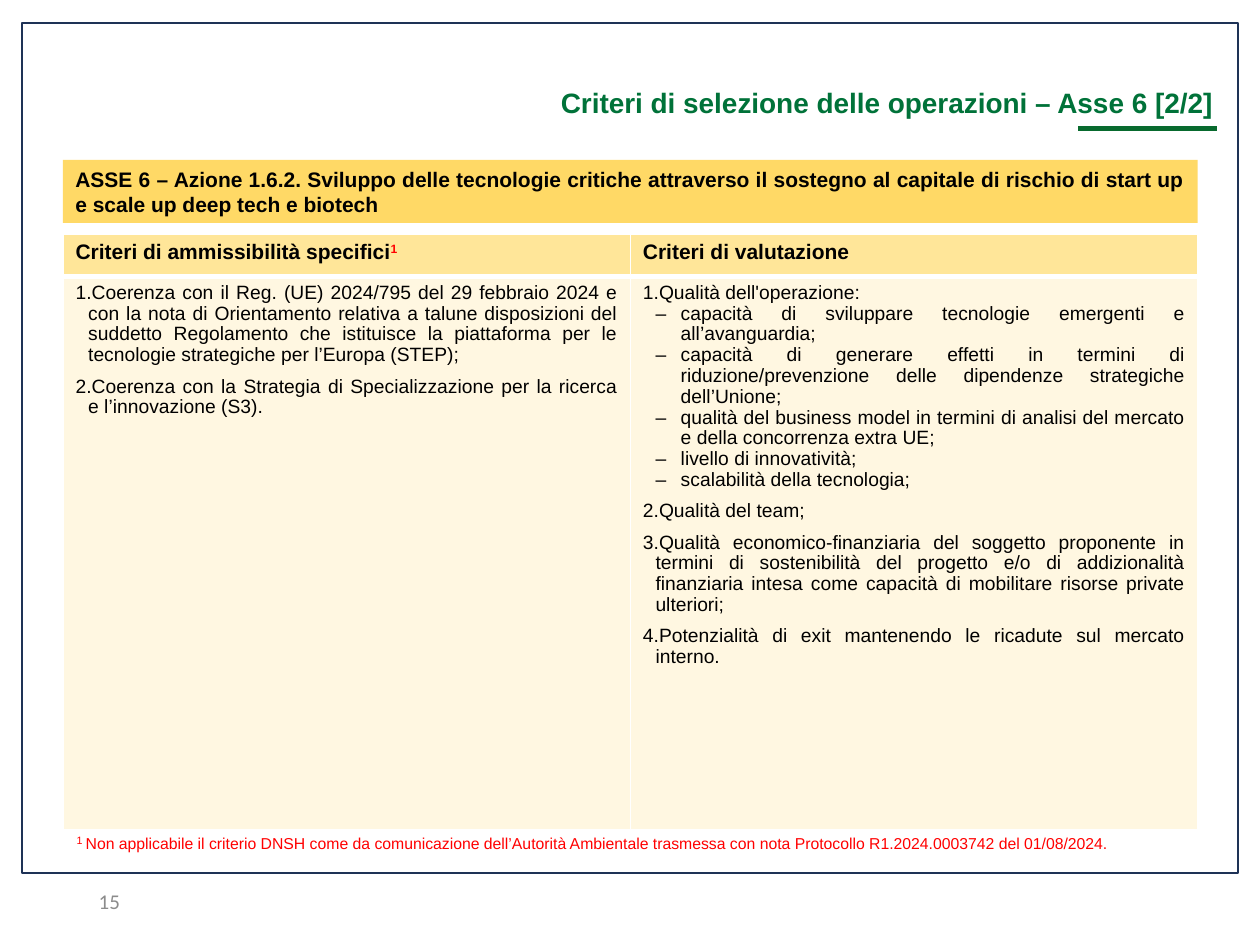
from dataclasses import dataclass

from lxml import etree
from pptx import Presentation
from pptx.dml.color import RGBColor
from pptx.enum import shapes, text
from pptx.oxml import ns
from pptx.util import Pt


@dataclass(frozen=True)
class Theme:
    font: str = "Arial"
    folio: str = "Calibri"
    black: str = "000000"
    white: str = "FFFFFF"
    red: str = "FF0000"
    green: str = "007239"
    rule: str = "086A2E"
    navy: str = "1E3256"
    gray: str = "8C8C8C"
    gold: str = "FFD966"
    sand: str = "FFE699"
    cream: str = "FFF7E1"
    title: float = 16
    head: float = 12
    body: float = 11
    mark: float = 10.5
    note: float = 9


@dataclass(frozen=True)
class Box:
    x: float
    y: float
    w: float
    h: float

    def pts(self) -> tuple:
        return Pt(self.x), Pt(self.y), Pt(self.w), Pt(self.h)


@dataclass(frozen=True)
class Item:
    words: str
    start: int = 1
    dash: bool = False
    after: float = 0


T = Theme()
ALIGN = text.PP_ALIGN

LEFT = (
    Item("Coerenza con il Reg. (UE) 2024/795 del 29 febbraio 2024 e con la nota di "
         "Orientamento relativa a talune disposizioni del suddetto Regolamento che "
         "istituisce la piattaforma per le tecnologie strategiche per l’Europa (STEP);",
         after=6),
    Item("Coerenza con la Strategia di Specializzazione per la ricerca e l’innovazione (S3).",
         after=6),
)
RIGHT = (
    Item("Qualità dell'operazione:"),
    Item("capacità di sviluppare tecnologie emergenti e all’avanguardia;", dash=True),
    Item("capacità di generare effetti in termini di riduzione/prevenzione delle "
         "dipendenze strategiche dell’Unione;", dash=True),
    Item("qualità del business model in termini di analisi del mercato e della "
         "concorrenza extra UE;", dash=True),
    Item("livello di innovatività;", dash=True),
    Item("scalabilità della tecnologia;", dash=True, after=6),
    Item("Qualità del team;", start=2, after=6),
    Item("Qualità economico-finanziaria del soggetto proponente in termini di "
         "sostenibilità del progetto e/o di addizionalità finanziaria intesa come "
         "capacità di mobilitare risorse private ulteriori;", start=2, after=6),
    Item("Potenzialità di exit mantenendo le ricadute sul mercato interno.", start=2),
)


def color(code: str) -> RGBColor:
    return RGBColor.from_string(code)


def style(font, size: float, code: str, bold: bool = False, name: str = T.font) -> None:
    font.name, font.size, font.bold = name, Pt(size), bold
    font.color.rgb = color(code)


def raised(para, words: str):
    run = para.add_run()
    run.text = words
    run.font.color.rgb = color(T.red)
    run.font._element.set("baseline", "30000")
    return run


def label(frame, words: str, size: float, code: str, align=ALIGN.LEFT,
          bold: bool = False, name: str = T.font):
    frame.word_wrap = True
    para = frame.paragraphs[0]
    para.text, para.alignment = words, align
    style(para.font, size, code, bold, name)
    return para


def block(slide, box: Box):
    shape = slide.shapes.add_shape(shapes.MSO_SHAPE.RECTANGLE, *box.pts())
    shape.shadow.inherit = False
    return shape


def border(cell, sides: dict) -> None:
    props = cell._tc.get_or_add_tcPr()
    for side, width in sides.items():
        line = etree.SubElement(props, ns.qn(f"a:ln{side}"), w=str(Pt(width)))
        fill = etree.SubElement(line, ns.qn("a:solidFill"))
        etree.SubElement(fill, ns.qn("a:srgbClr"), val=T.white)


def bullet(para, item: Item) -> None:
    props = para._p.get_or_add_pPr()
    left, hang = (21.6, 14.4) if item.dash else (7.2, 7.2)
    props.set("marL", str(Pt(left)))
    props.set("indent", str(-Pt(hang)))
    etree.SubElement(props, ns.qn("a:buFont"), typeface=T.font)
    if item.dash:
        etree.SubElement(props, ns.qn("a:buChar"), char="–")
    else:
        num = etree.SubElement(props, ns.qn("a:buAutoNum"), type="arabicPeriod")
        if item.start > 1:
            num.set("startAt", str(item.start))


def fill_list(frame, items: tuple) -> None:
    for i, item in enumerate(items):
        para = frame.add_paragraph() if i else frame.paragraphs[0]
        para.text, para.alignment = item.words, ALIGN.JUSTIFY
        para.space_after = Pt(item.after)
        para.line_spacing = 0.97
        bullet(para, item)
        style(para.font, T.body, T.black)


def grid(slide, box: Box, top: float) -> None:
    table = slide.shapes.add_table(2, 2, *box.pts()).table
    table.first_row = table.horz_banding = False
    for col in table.columns:
        col.width = Pt(box.w / 2)
    for row, high in zip(table.rows, (top, box.h - top)):
        row.height = Pt(high)
    for r, (code, sides) in enumerate((
        (T.sand, {"L": 1, "R": 1, "T": 1, "B": 3}),
        (T.cream, {"L": 1, "R": 1, "T": 3, "B": 1}),
    )):
        for cell in table.rows[r].cells:
            border(cell, sides)
            cell.fill.solid()
            cell.fill.fore_color.rgb = color(code)
    heads = [
        label(table.cell(0, c).text_frame, words, T.head, T.black, bold=True)
        for c, words in enumerate(("Criteri di ammissibilità specifici",
                                   "Criteri di valutazione"))
    ]
    raised(heads[0], "1")
    for c, items in enumerate((LEFT, RIGHT)):
        fill_list(table.cell(1, c).text_frame, items)


def main() -> None:
    deck = Presentation()
    deck.slide_width, deck.slide_height = Pt(720), Pt(540)
    slide = deck.slides.add_slide(deck.slide_layouts[5])

    rule = slide.shapes.add_connector(
        shapes.MSO_CONNECTOR.STRAIGHT, Pt(616.3), Pt(73.4), Pt(695.5), Pt(73.4))
    rule.line.color.rgb, rule.line.width = color(T.rule), Pt(3)
    etree.SubElement(rule._element.spPr, ns.qn("a:effectLst"))

    frame = block(slide, Box(12.5, 13, 695, 486))
    frame.fill.background()
    frame.line.color.rgb, frame.line.width = color(T.navy), Pt(1)

    title = slide.shapes.title
    title.left, title.top, title.width, title.height = Box(165, 45.4, 535.5, 26.6).pts()
    title.text_frame.auto_size = text.MSO_AUTO_SIZE.NONE
    label(title.text_frame, "Criteri di selezione delle operazioni – Asse 6 [2/2]",
          T.title, T.green, ALIGN.RIGHT, True)

    grid(slide, Box(36, 134, 648.4, 340), 24)

    band = block(slide, Box(36, 91.4, 648.4, 36))
    band.fill.solid()
    band.fill.fore_color.rgb = color(T.gold)
    band.line.fill.background()
    label(band.text_frame,
          "ASSE 6 – Azione 1.6.2. Sviluppo delle tecnologie critiche attraverso il "
          "sostegno al capitale di rischio di start up e scale up deep tech e biotech",
          T.head, T.black, ALIGN.JUSTIFY, True)

    note = slide.shapes.add_textbox(*Box(36.8, 471.6, 648.4, 18).pts())
    note.text_frame.word_wrap = True
    para = note.text_frame.paragraphs[0]
    style(para.font, T.note, T.red)
    raised(para, "1 ").font.size = Pt(T.mark)
    para.add_run().text = (
        "Non applicabile il criterio DNSH come da comunicazione dell’Autorità "
        "Ambientale trasmessa con nota Protocollo R1.2024.0003742 del 01/08/2024.")

    folio = slide.shapes.add_textbox(*Box(14.4, 500.4, 61.2, 28.8).pts())
    folio.text_frame.vertical_anchor = text.MSO_ANCHOR.MIDDLE
    label(folio.text_frame, "15", T.head, T.gray, ALIGN.RIGHT, name=T.folio)

    deck.save("out.pptx")


if __name__ == "__main__":
    main()
